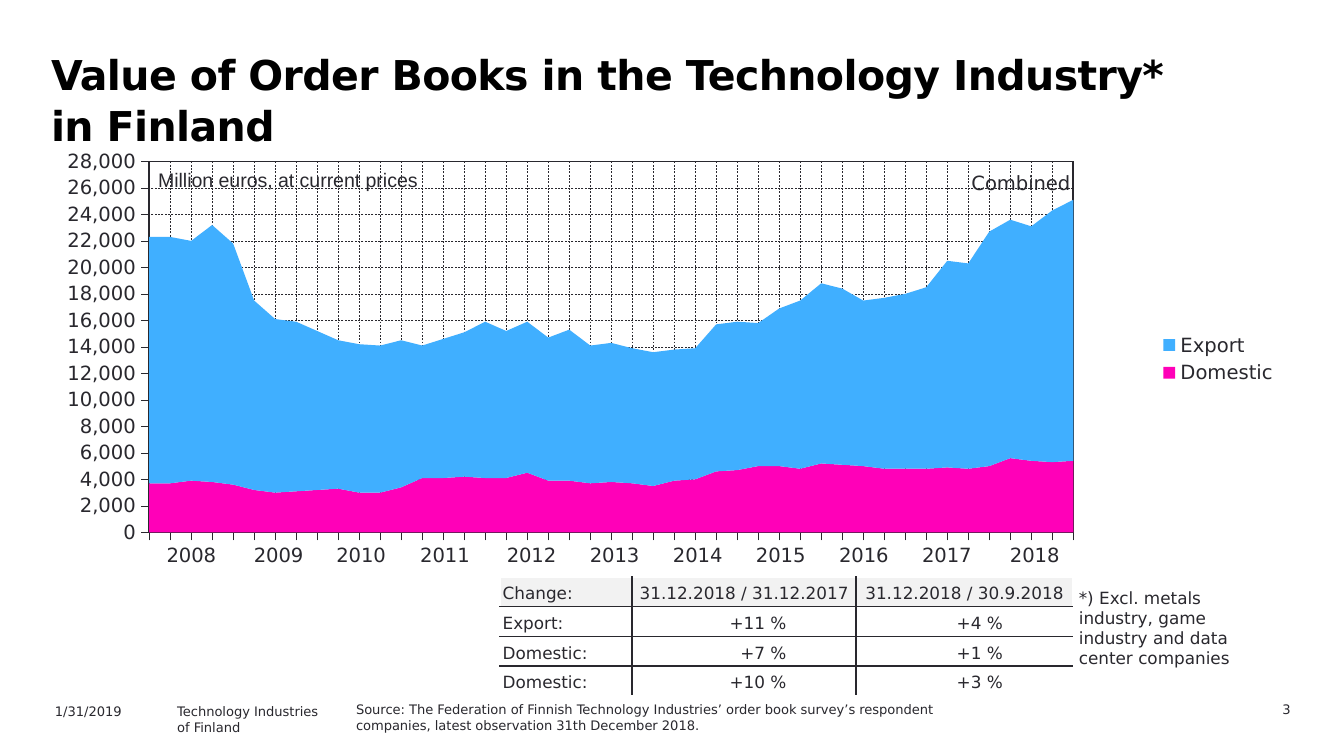
from lxml import etree
from pptx import Presentation
from pptx.chart.data import CategoryChartData
from pptx.dml.color import RGBColor
from pptx.enum.chart import XL_CHART_TYPE as CT, XL_LEGEND_POSITION as LP
from pptx.enum.chart import XL_TICK_LABEL_POSITION as TLP, XL_TICK_MARK as TM
from pptx.enum.dml import MSO_LINE
from pptx.enum.text import MSO_ANCHOR as VA, MSO_AUTO_SIZE, PP_ALIGN as AL
from pptx.oxml import parse_xml
from pptx.oxml.ns import nsdecls, qn
from pptx.util import Cm, Pt

INK = RGBColor(0x29, 0x28, 0x2E)
BLACK = RGBColor(0, 0, 0)
WHITE = RGBColor(255, 255, 255)
HEADER = RGBColor(0xF2, 0xF2, 0xF2)
PINK = RGBColor(0xFF, 0x00, 0xB8)
BLUE = RGBColor(0x40, 0xAF, 0xFF)
FONT = "DejaVu Sans"

# Content
TITLE = "Value of Order Books in the Technology Industry* in Finland"
SERIES = [  # name, colour, quarterly values in million euros
    ("Domestic", PINK, [
        3700, 3700, 3900, 3800, 3600, 3200, 3000, 3100, 3200, 3300, 3000, 3000,
        3400, 4100, 4100, 4200, 4100, 4100, 4500, 3900, 3900, 3700, 3800, 3700,
        3500, 3900, 4000, 4600, 4700, 5000, 5000, 4800, 5200, 5100, 5000, 4800,
        4800, 4800, 4900, 4800, 5000, 5600, 5400, 5300, 5400]),
    ("Export", BLUE, [
        18600, 18600, 18100, 19400, 18200, 14300, 13100, 12800, 12000, 11200,
        11200, 11100, 11100, 10000, 10500, 10900, 11800, 11100, 11400, 10800,
        11400, 10400, 10500, 10200, 10100, 9900, 9900, 11100, 11200, 10800,
        11900, 12700, 13600, 13300, 12500, 12900, 13200, 13700, 15600, 15500,
        17700, 18000, 17700, 19000, 19700]),
]
YEARS = [[str(year) for year in range(2008, 2019)]]
YEAR_WIDTHS = [1.65, 1.65, 1.47, 1.7] + [1.57] * 6 + [1.75]
CHANGES = [
    ["Change:", "31.12.2018 / 31.12.2017", "31.12.2018 / 30.9.2018"],
    ["Export:", "+11 %", "+4 %"],
    ["Domestic:", "+7 %", "+1 %"],
    ["Domestic:", "+10 %", "+3 %"],
]
CHANGE_WIDTHS = [2.49, 4.24, 4.09]
LABELS = [  # box in cm, paragraphs, size, format
    ((2.74, 3.05, 5.61, 0.69), ["Million euros, at current prices"], 10.5,
     {"name": "Arial"}),
    ((18.11, 3.1, 2.69, 0.69), ["Combined"], 10.5, {}),
    ((20.14, 10.97, 4.22, 1.8),
     ["*) Excl. metals industry, game industry and data center companies"], 9, {}),
    ((0.79, 13.16, 2.54, 0.46), ["1/31/2019"], 7, {}),
    ((3.1, 13.16, 4.57, 0.46), ["Technology Industries", "of Finland"], 7, {}),
    ((6.48, 13.13, 12.88, 0.46),
     ["Source: The Federation of Finnish Technology Industries’ order book survey’s "
      "respondent companies, latest observation 31th December 2018."], 7, {}),
    ((22.25, 13.13, 2.39, 0.46), ["3"], 7, {"align": AL.RIGHT}),
]


def set_font(font, size, color=INK, **extra):
    for key, value in {"name": FONT, "size": Pt(size), "bold": False, **extra}.items():
        setattr(font, key, value)
    font.color.rgb = color


def set_line(line, width, dash=None):
    line.color.rgb = INK
    line.width = Pt(width)
    if dash:
        line.dash_style = dash


def box(*lengths):
    return [Cm(v) for v in lengths]


def manual_layout(x, y, w, h, inner=False):
    target = '<c:layoutTarget val="inner"/>' if inner else ""
    sizes = "".join(f'<c:{k} val="{v}"/>' for k, v in zip("xywh", (x, y, w, h)))
    return parse_xml(f'<c:layout {nsdecls("c")}><c:manualLayout>{target}'
                     f'<c:xMode val="edge"/><c:yMode val="edge"/>{sizes}'
                     '</c:manualLayout></c:layout>')


def add_table(s, rows, left, top, widths, height):
    frame = s.shapes.add_table(len(rows), len(widths),
                               *box(left, top, sum(widths), height * len(rows)))
    table = frame.table
    table.first_row = table.horz_banding = False
    frame._element.find(".//" + qn("a:tableStyleId")).text = \
        "{2D5ABB26-0587-4C30-8999-92F81FD0307C}"
    for column, width in zip(table.columns, widths):
        column.width = Cm(width)
    for row in table.rows:
        row.height = Cm(height)
    return table


def write_cell(cell, text, size, align):
    p = cell.text_frame.paragraphs[0]
    p.alignment = align
    r = p.add_run()
    r.text = text
    set_font(r.font, size)


def set_borders(cell, colors):
    tcPr = cell._tc.get_or_add_tcPr()
    for i, (side, color) in enumerate(colors.items()):
        tcPr.insert(i, parse_xml(
            f'<a:{side} {nsdecls("a")} w="12700"><a:solidFill>'
            f'<a:srgbClr val="{color}"/></a:solidFill></a:{side}>'))


prs = Presentation()
prs.slide_width, prs.slide_height = Cm(25.4), Cm(14.28)
s = prs.slides.add_slide(prs.slide_layouts[5])

# Title
title = s.shapes.title
title.left, title.top, title.width, title.height = box(0.71, 0.79, 22.2, 1.8)
tf = title.text_frame
tf.auto_size = MSO_AUTO_SIZE.NONE
tf.vertical_anchor = VA.TOP
p = tf.paragraphs[0]
p.alignment, p.line_spacing = AL.LEFT, Pt(27)
r = p.add_run()
r.text = TITLE
set_font(r.font, 22, BLACK, bold=True)
r.font._element.set("spc", "-30")

# Stacked area chart
data = CategoryChartData(number_format="#,##0")
data.categories = [str(n + 1) for n in range(len(SERIES[0][2]))]
for name, _, values in SERIES:
    data.add_series(name, values)
chart = s.shapes.add_chart(CT.AREA_STACKED, *box(1.07, 2.82, 23.32, 7.92), data).chart
chart.has_title = False
set_font(chart.font, 10.5)
for series, (_, color, _) in zip(chart.plots[0].series, SERIES):
    series.format.fill.solid()
    series.format.fill.fore_color.rgb = color
for axis in (chart.category_axis, chart.value_axis):
    axis.has_major_gridlines = True
    axis.major_tick_mark, axis.minor_tick_mark = TM.OUTSIDE, TM.NONE
    set_line(axis.format.line, 0.22)
    set_line(axis.major_gridlines.format.line, 0.25, MSO_LINE.DASH)
    set_font(axis.tick_labels.font, 10.5)
chart.category_axis.tick_label_position = TLP.NONE
axis = chart.value_axis
axis.minimum_scale, axis.maximum_scale, axis.major_unit = 0, 28000, 2000
axis.tick_labels.number_format = "#,##0"
axis.tick_labels.number_format_is_linked = False
axis._element.find(qn("c:crossBetween")).set("val", "midCat")

# Plot frame and legend place
area = chart._chartSpace.chart.plotArea
for old in area.findall(qn("c:layout")):
    area.remove(old)
area.insert(0, manual_layout(0.075, 0.029, 0.749, 0.885, inner=True))
frame = etree.SubElement(area, qn("c:spPr"))
etree.SubElement(frame, qn("a:noFill"))
frame.append(parse_xml(f'<a:ln {nsdecls("a")} w="12700"><a:solidFill>'
                       f'<a:srgbClr val="{INK}"/></a:solidFill></a:ln>'))
chart.has_legend = True
legend = chart.legend
legend.position, legend.include_in_layout = LP.RIGHT, False
set_font(legend.font, 10.5)
legend._element.find(qn("c:legendPos")).addnext(manual_layout(0.86, 0.32, 0.14, 0.4))

# Year labels under the chart
years = add_table(s, YEARS, 2.79, 10.16, YEAR_WIDTHS, 0.7)
for cell, year in zip(years.iter_cells(), YEARS[0]):
    write_cell(cell, year, 10.5, AL.CENTER)

# Change table: dark inner rules, white outer edge
changes = add_table(s, CHANGES, 9.45, 10.9, CHANGE_WIDTHS, 0.56)
last_row, last_col = len(CHANGES) - 1, len(CHANGE_WIDTHS) - 1
for i, row in enumerate(CHANGES):
    for j, text in enumerate(row):
        cell = changes.cell(i, j)
        number = i > 0 and j > 0
        cell.vertical_anchor = VA.BOTTOM
        cell.margin_left = cell.margin_top = cell.margin_bottom = Cm(0.05)
        cell.margin_right = Cm(1.32 if number else 0.05)
        write_cell(cell, text, 9, AL.LEFT if j == 0 else AL.RIGHT if number else AL.CENTER)
        if i in (0, last_row):
            cell.fill.solid()
            cell.fill.fore_color.rgb = WHITE if i else HEADER
        else:
            cell.fill.background()
        edges = {"lnL": j == 0, "lnR": j == last_col, "lnT": i == 0, "lnB": i == last_row}
        set_borders(cell, {k: WHITE if outer else INK for k, outer in edges.items()})

# Chart notes and footer
for place, lines, size, fmt in LABELS:
    tf = s.shapes.add_textbox(*box(*place)).text_frame
    tf.word_wrap = True
    for i, line in enumerate(lines):
        p = tf.add_paragraph() if i else tf.paragraphs[0]
        p.alignment = fmt.get("align", AL.LEFT)
        r = p.add_run()
        r.text = line
        set_font(r.font, size, name=fmt.get("name", FONT))

prs.save("out.pptx")
